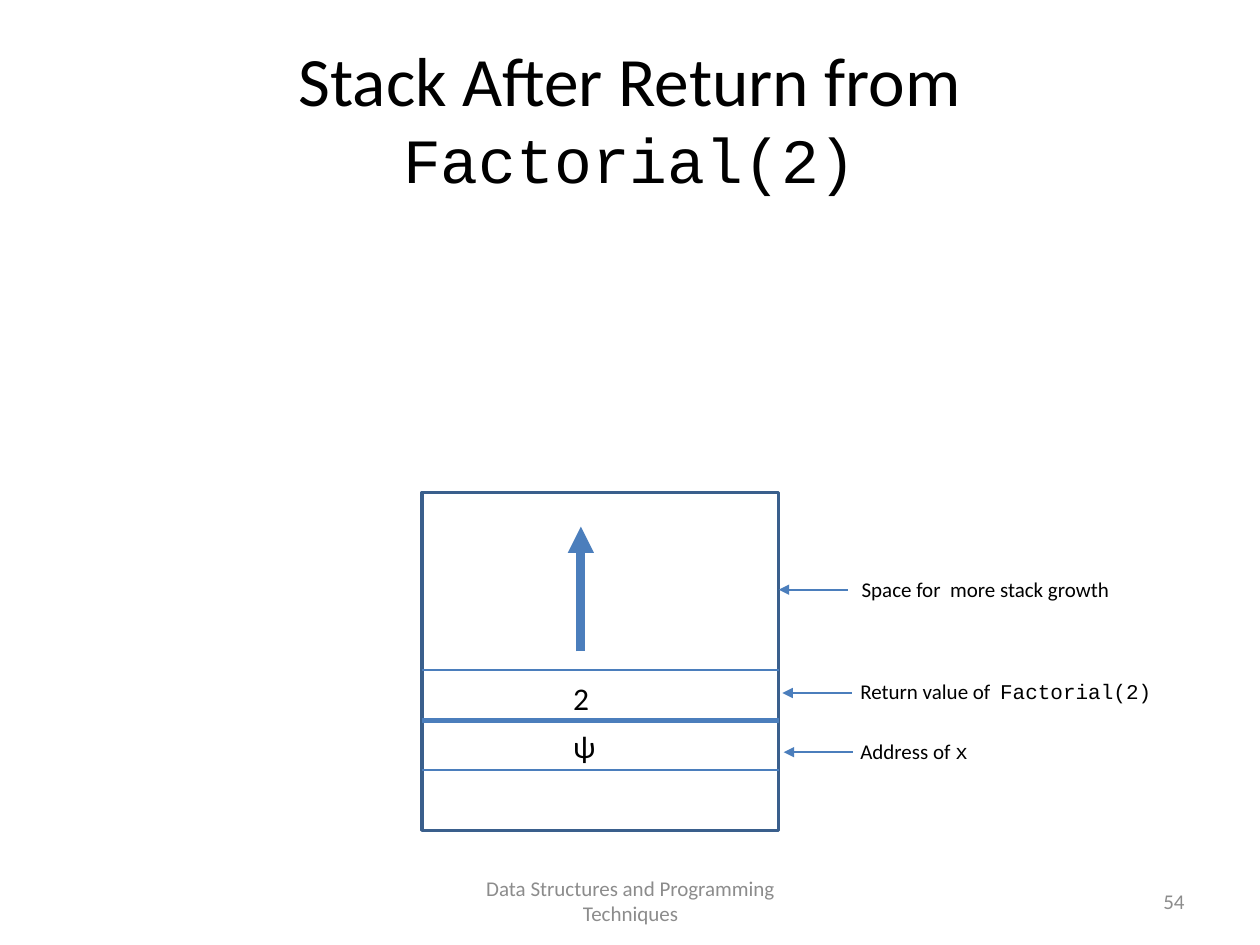
"""Build a slide showing the call stack after Factorial(2) returns."""
import pptx
import pptx.dml.color
import pptx.enum.shapes
import pptx.enum.text
import pptx.oxml
import pptx.oxml.ns
import pptx.util
from pptx.util import Inches

COLORS = {
    "text": "000000",
    "muted": "8C8C8C",
    "paper": "FFFFFF",
    "border": "3A5F8C",
    "line": "4B7EBC",
}
BODY, CODE = "Calibri", "Courier New"
ALIGN = pptx.enum.text.PP_ALIGN
ANCHOR = pptx.enum.text.MSO_ANCHOR
STACK_LEFT, STACK_TOP, STACK_WIDTH, STACK_HEIGHT = 3.35, 3.91, 2.83, 2.68
STACK_RIGHT = STACK_LEFT + STACK_WIDTH


def rgb(name):
    return pptx.dml.color.RGBColor.from_string(COLORS[name])


def place(shape, left, top, width, height):
    shape.left, shape.top = Inches(left), Inches(top)
    shape.width, shape.height = Inches(width), Inches(height)


def write_runs(shape, runs, color="text", align=ALIGN.LEFT, anchor=ANCHOR.TOP):
    frame = shape.text_frame
    frame.word_wrap = True
    frame.vertical_anchor = anchor
    paragraph = frame.paragraphs[0]
    paragraph.alignment = align
    for text, size, font in runs:
        run = paragraph.add_run()
        run.text = text
        run.font.size = pptx.util.Pt(size)
        run.font.name = font
        run.font.color.rgb = rgb(color)


def add_title(slide, runs):
    title = slide.shapes.title
    place(title, 0.5, 0.3, 9, 1.25)
    write_runs(title, runs, align=ALIGN.CENTER, anchor=ANCHOR.MIDDLE)


def add_text(slide, box, runs, **style):
    shape = slide.shapes.add_textbox(*map(Inches, box))
    write_runs(shape, runs, **style)


def add_stack_frame(slide):
    shape = slide.shapes.add_shape(
        pptx.enum.shapes.MSO_SHAPE.RECTANGLE,
        Inches(STACK_LEFT), Inches(STACK_TOP),
        Inches(STACK_WIDTH), Inches(STACK_HEIGHT))
    shape.shadow.inherit = False
    shape.fill.solid()
    shape.fill.fore_color.rgb = rgb("paper")
    shape.line.color.rgb = rgb("border")
    shape.line.width = pptx.util.Pt(2)


def add_line(slide, start, end, width=1, arrow=False):
    connector = slide.shapes.add_connector(
        pptx.enum.shapes.MSO_CONNECTOR.STRAIGHT,
        *map(Inches, (*start, *end)))
    connector.line.color.rgb = rgb("line")
    connector.line.width = pptx.util.Pt(width)
    properties = connector._element.spPr
    if arrow:
        tail = pptx.oxml.parse_xml(
            f'<a:tailEnd {pptx.oxml.ns.nsdecls("a")} type="triangle"/>')
        connector.line._get_or_add_ln().append(tail)
    properties.append(pptx.oxml.parse_xml(
        f'<a:effectLst {pptx.oxml.ns.nsdecls("a")}/>'))


def main():
    presentation = pptx.Presentation()
    presentation.slide_width, presentation.slide_height = Inches(10), Inches(7.5)
    slide = presentation.slides.add_slide(presentation.slide_layouts[5])
    add_title(slide, [("Stack After Return from", 39.6, BODY),
                      (" Factorial(2)", 36, CODE)])

    add_stack_frame(slide)
    for y, width in ((6.11, 1), (5.72, 3), (5.32, 1)):
        add_line(slide, (STACK_LEFT, y), (STACK_RIGHT, y), width)
    add_line(slide, (4.61, 5.17), (4.61, 4.18), 5, arrow=True)
    for value, top in (("ψ", 5.72), ("2", 5.34)):
        add_text(slide, (4.45, top, 0.63, 0.4), [(value, 18, BODY)])

    labels = (
        (6.74, 4.53, 6.18, 4.68, [("Space for  more stack growth", 12, BODY)]),
        (6.73, 5.34, 6.21, 5.5, [("Return value of  ", 12, BODY),
                                 ("Factorial(2)", 12, CODE)]),
        (6.73, 5.81, 6.22, 5.97, [("Address of ", 12, BODY), ("x", 12, CODE)]),
    )
    for left, top, arrow_tip, arrow_y, runs in labels:
        add_text(slide, (left, top, 2.8, 0.3), runs)
        add_line(slide, (arrow_tip + 0.55, arrow_y), (arrow_tip, arrow_y), arrow=True)

    footers = (
        (3.42, 3.17, "Data Structures and Programming Techniques", ALIGN.CENTER),
        (7.17, 2.33, "54", ALIGN.RIGHT),
    )
    for left, width, text, align in footers:
        add_text(slide, (left, 6.95, width, 0.4), [(text, 12, BODY)],
                 color="muted", align=align, anchor=ANCHOR.MIDDLE)
    presentation.save("out.pptx")


if __name__ == "__main__":
    main()
